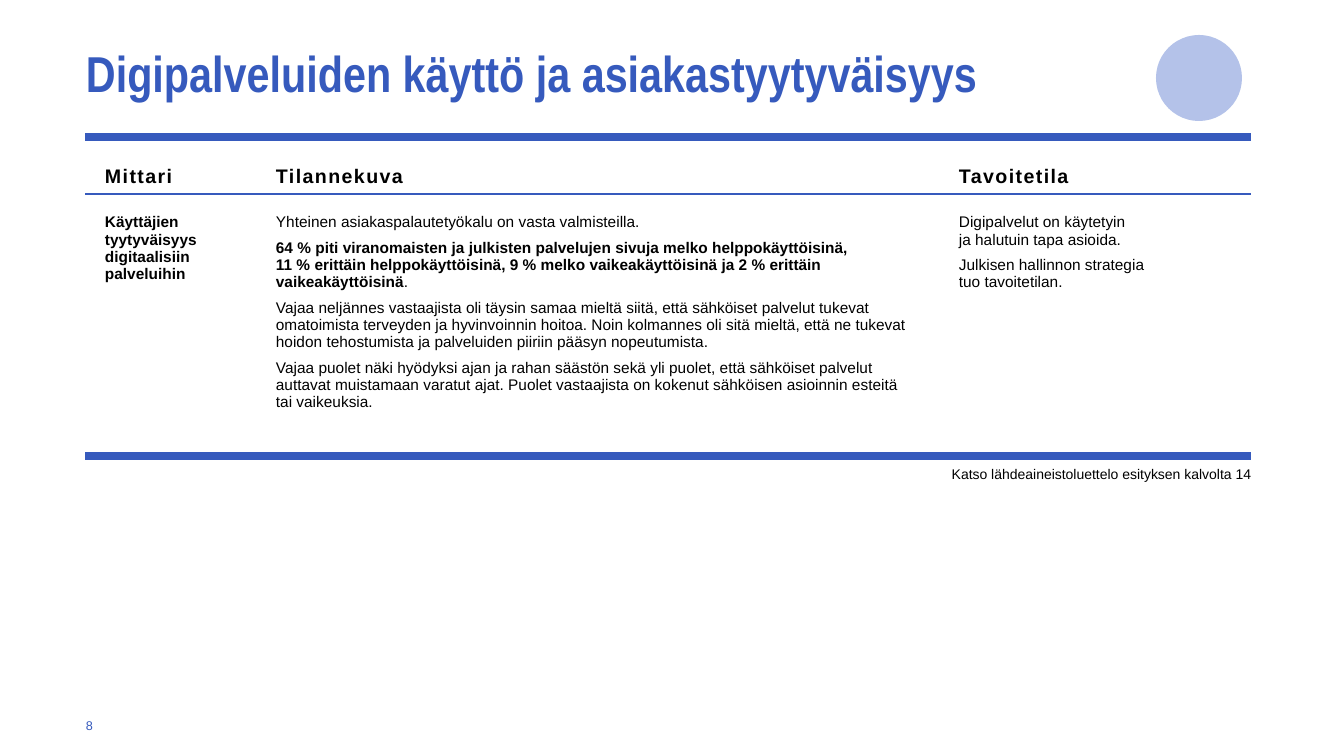
from pptx import Presentation
from pptx.dml.color import RGBColor
from pptx.enum.shapes import MSO_SHAPE
from pptx.enum.text import MSO_ANCHOR, MSO_AUTO_SIZE, PP_ALIGN
from pptx.oxml.ns import qn
from pptx.util import Emu, Pt
from lxml.etree import SubElement

BLUE = RGBColor(0x36, 0x5A, 0xBD)
PALE = RGBColor(0xAC, 0xBC, 0xE7)
BLACK = RGBColor(0, 0, 0)
PLAIN_TABLE = "{2D5ABB26-0587-4C30-8999-92F81FD0307C}"
SCALE = 914400 / 100.8

COL_WIDTHS = (141, 708, 317)
ROW_HEIGHTS = (57, 262)
LEFT_INSETS = (20, 50, 25)
HEADERS = ("Mittari", "Tilannekuva", "Tavoitetila")
BODY = (
    [[("Käyttäjien tyytyväisyys digitaalisiin palveluihin", True)]],
    [
        [("Yhteinen asiakaspalautetyökalu on vasta valmisteilla.", False)],
        [("64 % piti viranomaisten ja julkisten palvelujen sivuja melko helppokäyttöisinä,\n"
          "11 % erittäin helppokäyttöisinä, 9 % melko vaikeakäyttöisinä ja 2 % erittäin "
          "vaikeakäyttöisinä", True), (".", False)],
        [("Vajaa neljännes vastaajista oli täysin samaa mieltä siitä, että sähköiset palvelut "
          "tukevat omatoimista terveyden ja hyvinvoinnin hoitoa. Noin kolmannes oli sitä mieltä, "
          "että ne tukevat hoidon tehostumista ja palveluiden piiriin pääsyn nopeutumista.", False)],
        [("Vajaa puolet näki hyödyksi ajan ja rahan säästön sekä yli puolet, että sähköiset "
          "palvelut auttavat muistamaan varatut ajat. Puolet vastaajista on kokenut sähköisen "
          "asioinnin esteitä\ntai vaikeuksia.", False)],
    ],
    [
        [("Digipalvelut on käytetyin\nja halutuin tapa asioida.", False)],
        [("Julkisen hallinnon strategia\ntuo tavoitetilan.", False)],
    ],
)


def px(n):
    return Emu(round(n * SCALE))


def set_margins(frame, left, top, right, bottom):
    frame.margin_left, frame.margin_top = px(left), px(top)
    frame.margin_right, frame.margin_bottom = px(right), px(bottom)


def add_run(p, text, size, color=BLACK, bold=False, font="Arial", spacing=0):
    for i, line in enumerate(text.split("\n")):
        if i:
            p.add_line_break()
        r = p.add_run()
        r.text = line
        r.font.name, r.font.size, r.font.bold = font, Pt(size), bold
        r.font.color.rgb = color
        if spacing:
            r.font._element.set("spc", str(spacing * 100))


def add_title(slide, x, y, w, h):
    sp = slide.shapes.title
    sp.left, sp.top, sp.width, sp.height = px(x), px(y), px(w), px(h)
    tf = sp.text_frame
    tf.word_wrap = True
    tf.auto_size = MSO_AUTO_SIZE.NONE
    tf.vertical_anchor = MSO_ANCHOR.TOP
    set_margins(tf, 0, 18, 0, 0)
    p = tf.paragraphs[0]
    p.alignment = PP_ALIGN.LEFT
    p.line_spacing = 0.95
    add_run(p, "Digipalveluiden käyttö ja asiakastyytyväisyys", 36, BLUE, True, "Arial Narrow")


def add_circle(slide, x, y, d):
    sp = slide.shapes.add_shape(MSO_SHAPE.OVAL, px(x), px(y), px(d), px(d))
    sp.shadow.inherit = False
    sp.fill.solid()
    sp.fill.fore_color.rgb = PALE
    sp.line.fill.background()
    color = sp._element.spPr.find(qn("a:solidFill"))[0]
    SubElement(color, qn("a:alpha")).set("val", "90000")


def set_borders(cell, top, bottom):
    tc_pr = cell._tc.get_or_add_tcPr()
    for tag, width in (("a:lnL", 0), ("a:lnR", 0), ("a:lnT", top), ("a:lnB", bottom)):
        ln = SubElement(tc_pr, qn(tag))
        if width:
            ln.set("w", str(Pt(width)))
            fill = SubElement(ln, qn("a:solidFill"))
            SubElement(fill, qn("a:srgbClr")).set("val", str(BLUE))
        else:
            SubElement(ln, qn("a:noFill"))
    cell.fill.background()


def add_indicator_table(slide, x, y):
    frame = slide.shapes.add_table(2, 3, px(x), px(y), px(sum(COL_WIDTHS)), px(sum(ROW_HEIGHTS)))
    table = frame.table
    table.first_row = table.horz_banding = False
    table._tbl.tblPr.find(qn("a:tableStyleId")).text = PLAIN_TABLE
    for row, height in zip(table.rows, ROW_HEIGHTS):
        row.height = px(height)
    for i, (width, inset) in enumerate(zip(COL_WIDTHS, LEFT_INSETS)):
        table.columns[i].width = px(width)
        header, body = table.cell(0, i), table.cell(1, i)
        set_margins(header, inset, 5, 10, 6)
        header.vertical_anchor = MSO_ANCHOR.BOTTOM
        set_borders(header, 6, 1)
        add_run(header.text_frame.paragraphs[0], HEADERS[i], 14, bold=True, spacing=1)
        set_margins(body, inset, 20, 10, 5)
        set_borders(body, 1, 6)
        tf = body.text_frame
        for j, runs in enumerate(BODY[i]):
            p = tf.add_paragraph() if j else tf.paragraphs[0]
            p.space_after = Pt(6)
            for text, bold in runs:
                add_run(p, text, 11, bold=bold)


def add_note(slide, x, y, w, h, text, size, color, align, insets, wrap):
    tf = slide.shapes.add_textbox(px(x), px(y), px(w), px(h)).text_frame
    tf.word_wrap = wrap
    set_margins(tf, *insets)
    p = tf.paragraphs[0]
    p.alignment = align
    add_run(p, text, size, color)


def main():
    prs = Presentation()
    prs.slide_width, prs.slide_height = px(1344), px(756)
    slide = prs.slides.add_slide(prs.slide_layouts[5])
    add_note(slide, 929, 461, 322, 44, "Katso lähdeaineistoluettelo esityksen kalvolta 14",
             10, BLACK, PP_ALIGN.RIGHT, (10, 5, 0, 5), False)
    add_indicator_table(slide, 85, 137)
    add_title(slide, 86, 29, 1165, 146)
    add_note(slide, 86, 718, 40, 25, "8", 9, BLUE, PP_ALIGN.LEFT, (0, 0, 0, 0), True)
    add_circle(slide, 1156, 35, 86)
    prs.save("out.pptx")


if __name__ == "__main__":
    main()
